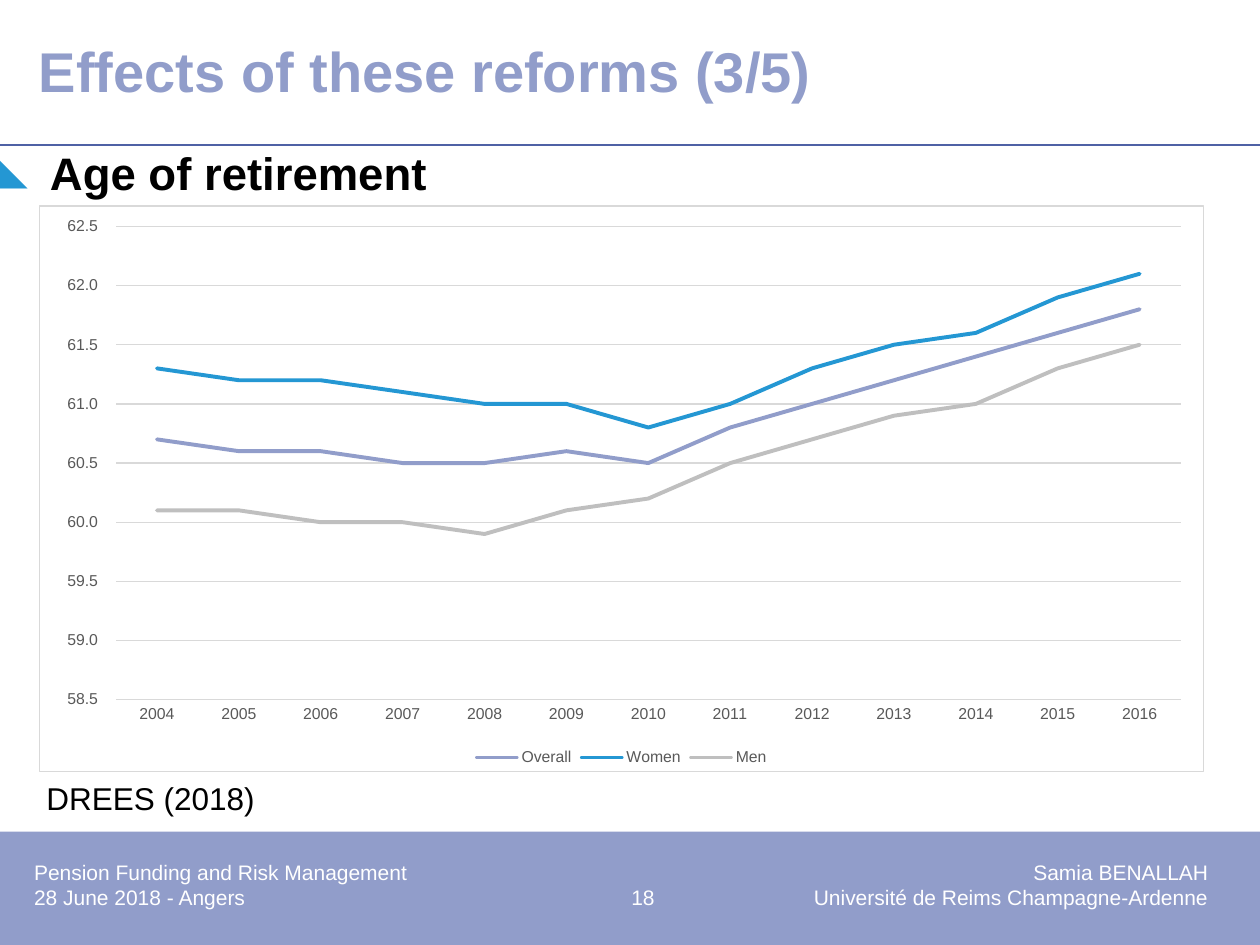
from lxml.etree import SubElement
from pptx import Presentation
from pptx.chart.data import CategoryChartData
from pptx.dml.color import RGBColor
from pptx.enum.chart import XL_CHART_TYPE as ChartType, XL_LEGEND_POSITION as LegendPosition
from pptx.enum.chart import XL_TICK_MARK as TickMark
from pptx.enum.shapes import MSO_CONNECTOR as Connector, MSO_SHAPE as Shape
from pptx.enum.text import MSO_ANCHOR as Anchor
from pptx.oxml import parse_xml
from pptx.oxml.ns import nsdecls, qn
from pptx.util import Inches, Pt

COLORS = {
    "lavender": "919DCA", "blue": "2497D3", "silver": "BFBFBF", "rule": "4F61A5",
    "grid": "D9D9D9", "label": "595959", "black": "000000", "white": "FFFFFF",
}


def rgb(name):
    return RGBColor.from_string(COLORS[name])


def add_text(lines, left, top, width, height, size, color, bold=False, inset=0):
    box = slide.shapes.add_textbox(Inches(left), Inches(top), Inches(width), Inches(height))
    frame = box.text_frame
    frame.word_wrap = True
    frame.margin_left = frame.margin_right = Inches(inset)
    frame.margin_top = frame.margin_bottom = Inches(inset / 2)
    frame.text = "\n".join(lines)
    for paragraph in frame.paragraphs:
        paragraph.font.name = "Arial"
        paragraph.font.size = Pt(size)
        paragraph.font.bold = bold
        paragraph.font.color.rgb = rgb(color)
    return frame


presentation = Presentation()
presentation.slide_width = Inches(10)
presentation.slide_height = Inches(7.5)
slide = presentation.slides.add_slide(presentation.slide_layouts[6])

footer_band = slide.shapes.add_shape(Shape.RECTANGLE, 0, Inches(6.6), Inches(10), Inches(0.9))
footer_band.shadow.inherit = False
footer_band.fill.solid()
footer_band.fill.fore_color.rgb = rgb("lavender")
footer_band.line.fill.background()

title_rule = slide.shapes.add_connector(
    Connector.STRAIGHT, 0, Inches(1.15), Inches(10), Inches(1.15))
title_rule.line.color.rgb = rgb("rule")
title_rule.line.width = Pt(0.75)
SubElement(title_rule._element.spPr, qn("a:effectLst"))

footer = add_text(
    ["Pension Funding and Risk Management\t\tSamia BENALLAH",
     "28 June 2018 - Angers\t 18\tUniversité de Reims Champagne-Ardenne"],
    0.27, 6.82, 9.45, 0.52, 12, "white")
for paragraph in footer.paragraphs:
    tab_list = parse_xml(f"<a:tabLst {nsdecls('a')}/>")
    for position, alignment in ((4.81, "ctr"), (9.32, "r")):
        SubElement(tab_list, qn("a:tab"), pos=str(Inches(position)), algn=alignment)
    paragraph._p.get_or_add_pPr().find(qn("a:defRPr")).addprevious(tab_list)

title = add_text(["Effects of these reforms (3/5)"], 0.31, 0.2, 9.53, 0.79, 32, "lavender", True)
title.vertical_anchor = Anchor.MIDDLE
title.paragraphs[0].line_spacing = 0.85

heading = add_text([" Age of retirement"], 0, 1.15, 10, 5.51, 26, "black", True)
properties = heading.paragraphs[0]._p.get_or_add_pPr()
properties.set("marL", str(Inches(0.31)))
properties.set("indent", str(Inches(-0.31)))
for bullet in (
    f'<a:buClr {nsdecls("a")}><a:srgbClr val="{COLORS["blue"]}"/></a:buClr>',
    f'<a:buSzPct {nsdecls("a")} val="80000"/>',
    f'<a:buFont {nsdecls("a")} typeface="Arial"/>',
    f'<a:buChar {nsdecls("a")} char="◣"/>',
):
    properties.find(qn("a:defRPr")).addprevious(parse_xml(bullet))

add_text(["DREES (2018)"], 0.27, 6.13, 9.45, 0.4, 18, "black", inset=0.1)

retirement_ages = {
    "Overall": ("lavender", [60.7, 60.6, 60.6, 60.5, 60.5, 60.6, 60.5,
                             60.8, 61.0, 61.2, 61.4, 61.6, 61.8]),
    "Women": ("blue", [61.3, 61.2, 61.2, 61.1, 61.0, 61.0, 60.8,
                       61.0, 61.3, 61.5, 61.6, 61.9, 62.1]),
    "Men": ("silver", [60.1, 60.1, 60.0, 60.0, 59.9, 60.1, 60.2,
                       60.5, 60.7, 60.9, 61.0, 61.3, 61.5]),
}
chart_data = CategoryChartData(number_format="0.0")
chart_data.categories = [str(year) for year in range(2004, 2017)]
for name, (color, ages) in retirement_ages.items():
    chart_data.add_series(name, ages)
chart = slide.shapes.add_chart(
    ChartType.LINE, Inches(0.31), Inches(1.63), Inches(9.25), Inches(4.5), chart_data).chart
chart.has_title = False
chart.font.name = "Arial"
chart.font.size = Pt(9)
chart.font.color.rgb = rgb("label")
chart.has_legend = True
chart.legend.position = LegendPosition.BOTTOM
chart.legend.include_in_layout = False
chart.plots[0].vary_by_categories = False

for series in chart.plots[0].series:
    series.smooth = False
    series.format.line.color.rgb = rgb(retirement_ages[series.name][0])
    series.format.line.width = Pt(2.25)
    series.format.line._get_or_add_ln().set("cap", "rnd")

value_axis = chart.value_axis
value_axis.minimum_scale = 58.5
value_axis.maximum_scale = 62.5
value_axis.major_unit = 0.5
value_axis.tick_labels.number_format = "#\\ ##0.0\\ _€"
value_axis.tick_labels.number_format_is_linked = False
value_axis.format.line.fill.background()
for axis in (value_axis, chart.category_axis):
    axis.major_tick_mark = axis.minor_tick_mark = TickMark.NONE
for line in (value_axis.major_gridlines.format.line, chart.category_axis.format.line):
    line.color.rgb = rgb("grid")
    line.width = Pt(0.75)

chart_frame = parse_xml(
    f'<c:spPr {nsdecls("c", "a")}>'
    f'<a:solidFill><a:srgbClr val="{COLORS["white"]}"/></a:solidFill>'
    f'<a:ln w="{Pt(0.75)}"><a:solidFill><a:srgbClr val="{COLORS["grid"]}"/></a:solidFill></a:ln>'
    "</c:spPr>")
chart._chartSpace.find(qn("c:txPr")).addprevious(chart_frame)

presentation.save("out.pptx")
